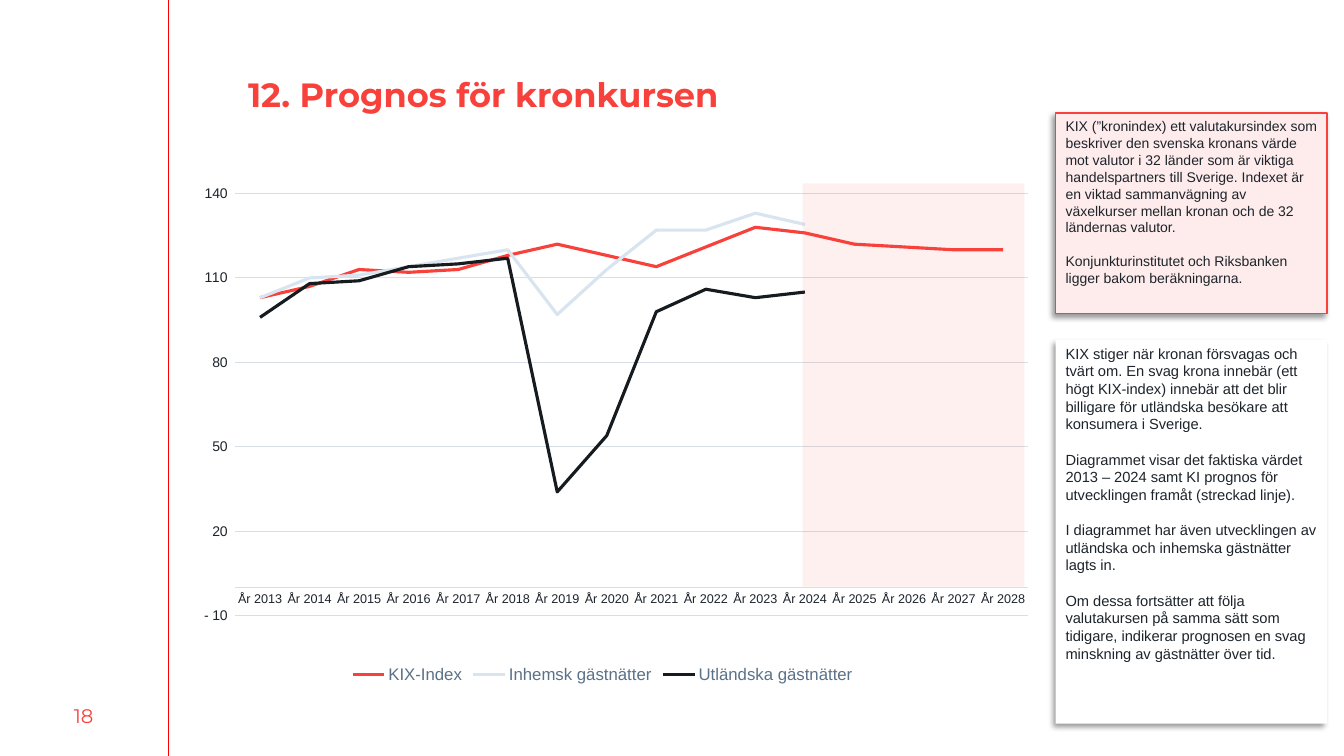
"""Build the slide with the forecast for the krona exchange rate."""
from dataclasses import dataclass

import pptx
import pptx.chart.data
import pptx.dml.color
import pptx.enum.chart
import pptx.enum.shapes
import pptx.enum.text
import pptx.oxml
import pptx.oxml.ns
import pptx.util

Inches = pptx.util.Inches
Pt = pptx.util.Pt
qn = pptx.oxml.ns.qn
Align = pptx.enum.text.PP_ALIGN
Anchor = pptx.enum.text.MSO_ANCHOR
NS = pptx.oxml.ns.nsdecls("a", "c")


@dataclass(frozen=True)
class Theme:
    head: str = "Montserrat"
    body: str = "Arial"
    red: str = "F7413A"
    rule: str = "FF0000"
    ink: str = "1D242B"
    slate: str = "5B7187"
    grid: str = "D8DEE5"
    pink: str = "FEECEC"
    white: str = "FFFFFF"
    lines: tuple = ("F8413A", "D8E5F0", "161B20")
    title: float = 24
    page: float = 14
    legend: float = 12
    note: float = 10.5
    small: float = 10
    tick: float = 9


class Deck:
    def __init__(self, theme):
        self.theme = theme
        self.show = pptx.Presentation()
        self.show.slide_width = Inches(13.33)
        self.show.slide_height = Inches(7.5)
        self.slide = self.show.slides.add_slide(self.show.slide_layouts[5])
        self.shapes = self.slide.shapes

    def color(self, code):
        return pptx.dml.color.RGBColor.from_string(code)

    def font(self, font, name, size, code, bold=False):
        font.name, font.size, font.bold = name, Pt(size), bold
        font.color.rgb = self.color(code)

    def stroke(self, line, code, width):
        line.color.rgb = self.color(code)
        line.width = Pt(width)

    def title(self, text, *box):
        shape = self.shapes.title
        shape.left, shape.top, shape.width, shape.height = map(Inches, box)
        frame = shape.text_frame
        frame.text = text
        frame.vertical_anchor = Anchor.TOP
        frame.margin_left = frame.margin_right = Inches(0.05)
        frame.margin_top = frame.margin_bottom = Inches(0.05)
        par = frame.paragraphs[0]
        par.alignment = Align.LEFT
        self.font(par.font, self.theme.head, self.theme.title, self.theme.red, True)
        self.shapes._spTree.append(shape._element)

    def label(self, text, *box):
        frame = self.shapes.add_textbox(*map(Inches, box)).text_frame
        frame.word_wrap = True
        frame.vertical_anchor = Anchor.MIDDLE
        par = frame.paragraphs[0]
        par.text = text
        par.alignment = Align.CENTER
        self.font(par.font, self.theme.head, self.theme.page, self.theme.red)

    def rule(self, *ends):
        kind = pptx.enum.shapes.MSO_CONNECTOR.STRAIGHT
        line = self.shapes.add_connector(kind, *map(Inches, ends))
        self.stroke(line.line, self.theme.rule, 0.75)
        props = line._element.spPr
        props.append(pptx.oxml.parse_xml(f"<a:effectLst {NS}/>"))

    def rect(self, fill, *box, alpha=None):
        kind = pptx.enum.shapes.MSO_SHAPE.RECTANGLE
        shape = self.shapes.add_shape(kind, *map(Inches, box))
        shape.shadow.inherit = False
        shape.fill.solid()
        shape.fill.fore_color.rgb = self.color(fill)
        shape.line.fill.background()
        if alpha:
            tone = shape._element.spPr.find(qn("a:solidFill"))[0]
            tone.append(pptx.oxml.parse_xml(f'<a:alpha {NS} val="{alpha * 1000}"/>'))
        return shape

    def note(self, texts, size, fill, *box, edge=None):
        shape = self.rect(fill, *box)
        if edge:
            self.stroke(shape.line, edge, 1)
        shape._element.spPr.find(qn("a:effectLst")).append(pptx.oxml.parse_xml(
            f'<a:outerShdw {NS} blurRad="{Pt(4)}" dist="{Pt(3)}" dir="8100000" '
            'algn="tr" rotWithShape="0"><a:srgbClr val="000000">'
            '<a:alpha val="40000"/></a:srgbClr></a:outerShdw>'))
        frame = shape.text_frame
        frame.word_wrap = True
        frame.vertical_anchor = Anchor.TOP
        for i, text in enumerate(texts):
            par = frame.add_paragraph() if i else frame.paragraphs[0]
            par.text = text
            par.alignment = Align.LEFT
            if i:
                par.space_before = Pt(size * 1.2)
            self.font(par.font, self.theme.body, size, self.theme.ink)

    def chart(self, cats, series, *box):
        theme = self.theme
        data = pptx.chart.data.CategoryChartData()
        data.categories = cats
        for name, vals in series.items():
            data.add_series(name, vals + [None] * (len(cats) - len(vals)))
        kind = pptx.enum.chart.XL_CHART_TYPE.LINE
        chart = self.shapes.add_chart(kind, *map(Inches, box), data).chart
        chart.has_title = False
        self.font(chart.font, theme.body, theme.small, theme.ink)
        chart.has_legend = True
        chart.legend.position = pptx.enum.chart.XL_LEGEND_POSITION.BOTTOM
        chart.legend.include_in_layout = False
        self.font(chart.legend.font, theme.body, theme.legend, theme.slate)
        plot = chart.plots[0]
        plot.vary_by_categories = False
        for row, code in zip(plot.series, theme.lines):
            row.smooth = False
            row.marker.style = pptx.enum.chart.XL_MARKER_STYLE.NONE
            self.stroke(row.format.line, code, 2.25)
        none = pptx.enum.chart.XL_TICK_MARK.NONE
        sizes = (theme.tick, theme.small)
        for axis, size in zip((chart.category_axis, chart.value_axis), sizes):
            axis.major_tick_mark = axis.minor_tick_mark = none
            self.font(axis.tick_labels.font, theme.body, size, theme.ink)
        self.stroke(chart.category_axis.format.line, theme.grid, 0.75)
        axis = chart.value_axis
        axis.minimum_scale, axis.maximum_scale, axis.major_unit = -10, 140, 30
        axis.format.line.fill.background()
        self.stroke(axis.major_gridlines.format.line, theme.grid, 0.75)
        axis.tick_labels.number_format = (
            r'_-* #\ ##0_-;\-* #\ ##0_-;_-* "-"??_-;_-')
        axis.tick_labels.number_format_is_linked = False
        self.place(chart, x=0.068, y=0.02, w=0.932, h=0.838)

    def place(self, chart, **sides):
        area = chart._chartSpace.chart.plotArea
        for old in area.findall(qn("c:layout")):
            area.remove(old)
        parts = '<c:layoutTarget val="inner"/>'
        parts += '<c:xMode val="edge"/><c:yMode val="edge"/>'
        parts += "".join(f'<c:{k} val="{v}"/>' for k, v in sides.items())
        area.insert(0, pptx.oxml.parse_xml(
            f"<c:layout {NS}><c:manualLayout>{parts}</c:manualLayout></c:layout>"))


def main():
    theme = Theme()
    deck = Deck(theme)
    deck.label("18", 0, 6.9, 1.66, 0.4)
    deck.rule(1.67, 0, 1.67, 7.5)
    series = {
        "KIX-Index": [103, 107, 113, 112, 113, 118, 122, 118,
                      114, 121, 128, 126, 122, 121, 120, 120],
        "Inhemsk gästnätter": [103, 110, 111, 114, 117, 120,
                               97, 113, 127, 127, 133, 129],
        "Utländska gästnätter": [96, 108, 109, 114, 115, 117,
                                 34, 54, 98, 106, 103, 105],
    }
    years = [f"År {year}" for year in range(2013, 2029)]
    deck.chart(years, series, 1.76, 1.82, 8.44, 5)
    deck.rect(theme.lines[0], 7.96, 1.82, 2.2, 4, alpha=8)
    deck.title("12. Prognos för kronkursen", 2.41, 0.68, 10.12, 0.89)
    deck.note([
        "KIX (”kronindex) ett valutakursindex som beskriver den svenska kronans "
        "värde mot valutor i 32 länder som är viktiga handelspartners till Sverige. "
        "Indexet är en viktad sammanvägning av växelkurser mellan kronan och de 32 "
        "ländernas valutor.",
        "Konjunkturinstitutet och Riksbanken ligger bakom beräkningarna.",
    ], theme.small, theme.pink, 10.47, 1.12, 2.69, 1.99, edge=theme.red)
    deck.note([
        "KIX stiger när kronan försvagas och tvärt om. En svag krona innebär (ett "
        "högt KIX-index) innebär att det blir billigare för utländska besökare att "
        "konsumera i Sverige.",
        "Diagrammet visar det faktiska värdet 2013 – 2024 samt KI prognos för "
        "utvecklingen framåt (streckad linje).",
        "I diagrammet har även utvecklingen av utländska och inhemska gästnätter "
        "lagts in.",
        "Om dessa fortsätter att följa valutakursen på samma sätt som tidigare, "
        "indikerar prognosen en svag minskning av gästnätter över tid.",
    ], theme.note, theme.white, 10.47, 3.37, 2.69, 3.81)
    deck.show.save("out.pptx")


if __name__ == "__main__":
    main()
